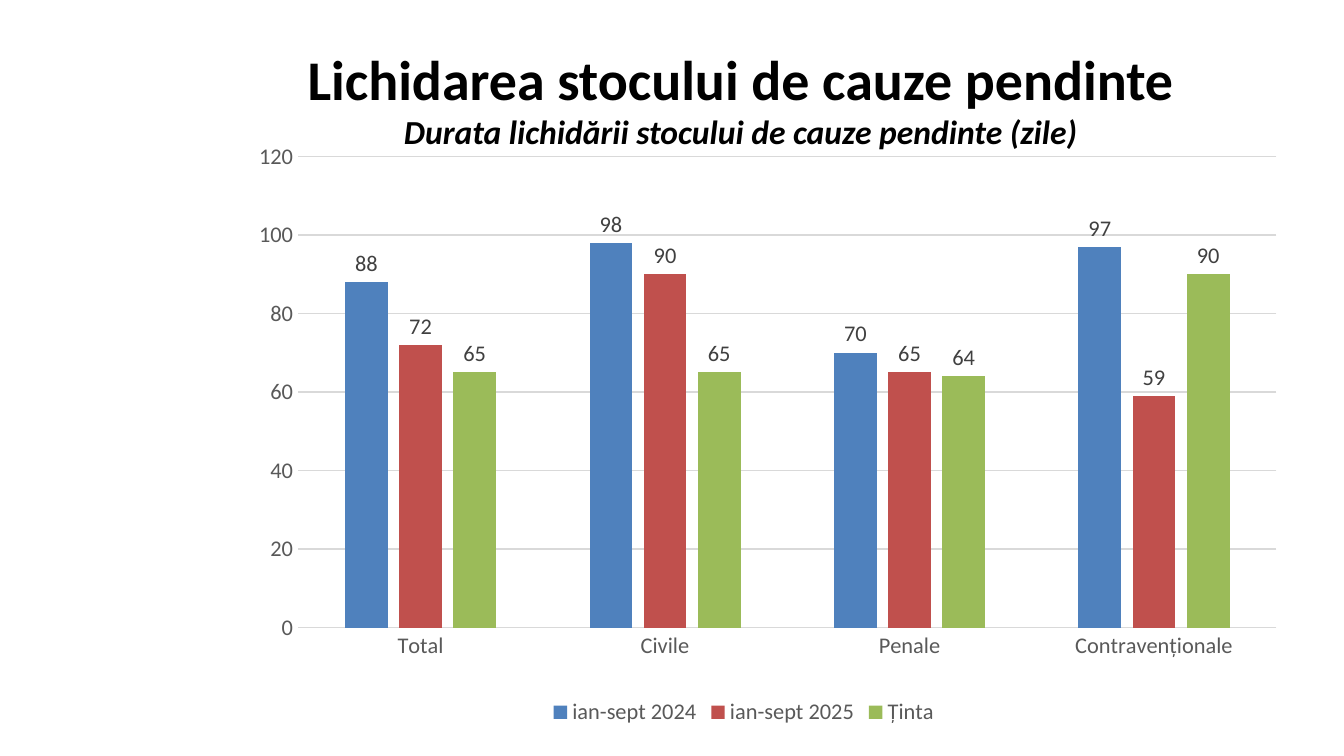
import pptx
import pptx.chart.data
import pptx.dml.color
import pptx.enum.chart
import pptx.enum.text
import pptx.oxml
import pptx.oxml.ns
import pptx.util

PX = 914400 / 134.4
FONT = "Calibri"
GRID = "D9D9D9"
AXIS_TEXT = "595959"
LABEL_TEXT = "404040"


def px(length):
    return pptx.util.Emu(round(length * PX))


def style_font(font, size, color):
    font.name = FONT
    font.size = pptx.util.Pt(size)
    font.color.rgb = pptx.dml.color.RGBColor.from_string(color)


presentation = pptx.Presentation()
presentation.slide_width = px(1344)
presentation.slide_height = px(756)
slide = presentation.slides.add_slide(presentation.slide_layouts[6])

# Chart
chart_data = pptx.chart.data.CategoryChartData()
chart_data.categories = ["Total", "Civile", "Penale", "Contravenționale"]
series_rows = [
    ("ian-sept 2024", (88, 98, 70, 97), "4F81BD"),
    ("ian-sept 2025", (72, 90, 65, 59), "C0504D"),
    ("Ținta", (65, 65, 64, 90), "9BBB59"),
]
for name, values, _ in series_rows:
    chart_data.add_series(name, values)

chart = slide.shapes.add_chart(
    pptx.enum.chart.XL_CHART_TYPE.COLUMN_CLUSTERED,
    px(211), px(134), px(1066), px(597), chart_data,
).chart
style_font(chart.font, 10, "000000")
chart.has_title = False
chart.has_legend = True
chart.legend.position = pptx.enum.chart.XL_LEGEND_POSITION.BOTTOM
chart.legend.include_in_layout = False
style_font(chart.legend.font, 12, AXIS_TEXT)

plot = chart.plots[0]
plot.gap_width = 219
plot.overlap = -27
plot.vary_by_categories = False
for series, (_, _, color) in zip(plot.series, series_rows):
    series.format.fill.solid()
    series.format.fill.fore_color.rgb = pptx.dml.color.RGBColor.from_string(color)
    labels = series.data_labels
    labels.show_value = True
    labels.position = pptx.enum.chart.XL_LABEL_POSITION.OUTSIDE_END
    style_font(labels.font, 12, LABEL_TEXT)

category_axis = chart.category_axis
value_axis = chart.value_axis
for axis in (category_axis, value_axis):
    axis.major_tick_mark = pptx.enum.chart.XL_TICK_MARK.NONE
    axis.minor_tick_mark = pptx.enum.chart.XL_TICK_MARK.NONE
    style_font(axis.tick_labels.font, 12, AXIS_TEXT)
value_axis.minimum_scale = 0
value_axis.maximum_scale = 120
value_axis.major_unit = 20
value_axis.has_major_gridlines = True
value_axis.format.line.fill.background()
for line in (category_axis.format.line, value_axis.major_gridlines.format.line):
    line.color.rgb = pptx.dml.color.RGBColor.from_string(GRID)
    line.width = pptx.util.Pt(0.75)

# Fixed inner plot area, as fractions of the chart
plot_area = chart.element.find(".//" + pptx.oxml.ns.qn("c:plotArea"))
for layout in plot_area.findall(pptx.oxml.ns.qn("c:layout")):
    plot_area.remove(layout)
settings = [("layoutTarget", "inner"), ("xMode", "edge"), ("yMode", "edge"),
            ("x", 0.082), ("y", 0.038), ("w", 0.918), ("h", 0.789)]
plot_area.insert(0, pptx.oxml.parse_xml(
    f"<c:layout {pptx.oxml.ns.nsdecls('c')}><c:manualLayout>"
    + "".join(f'<c:{tag} val="{value}"/>' for tag, value in settings)
    + "</c:manualLayout></c:layout>"
))

# Title with subtitle
title = slide.shapes.add_textbox(px(179), px(78), px(1124), px(40))
text_frame = title.text_frame
text_frame.word_wrap = True
text_frame.vertical_anchor = pptx.enum.text.MSO_ANCHOR.MIDDLE
paragraph = text_frame.paragraphs[0]
paragraph.text = ("Lichidarea stocului de cauze pendinte\v"
                  "Durata lichidării stocului de cauze pendinte (zile)")
paragraph.alignment = pptx.enum.text.PP_ALIGN.CENTER
for run, size, italic in zip(paragraph.runs, (30, 18), (False, True)):
    style_font(run.font, size, "000000")
    run.font.bold = True
    run.font.italic = italic

presentation.save("out.pptx")
